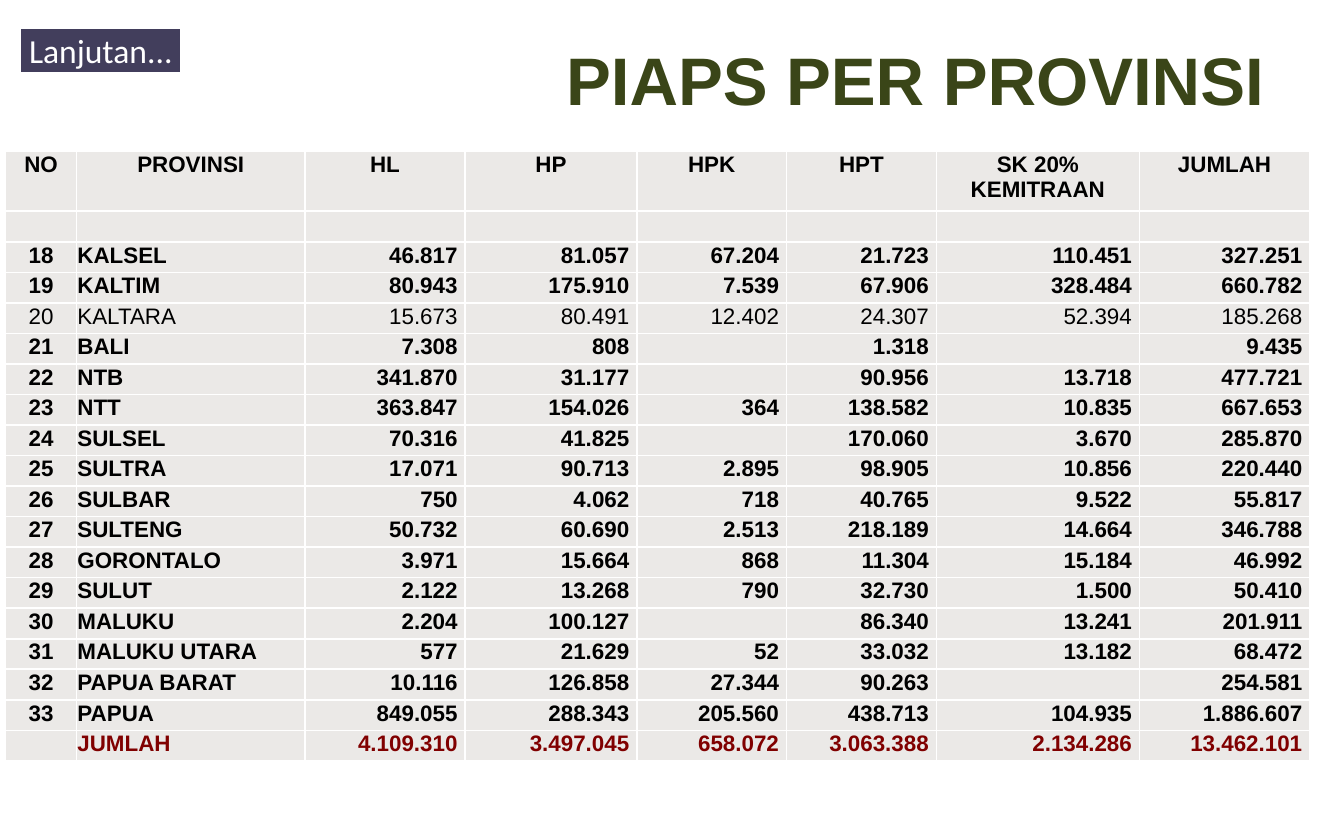
from lxml.etree import SubElement
from pptx import Presentation
from pptx.dml.color import RGBColor
from pptx.enum.shapes import MSO_SHAPE
from pptx.enum.text import MSO_ANCHOR, MSO_AUTO_SIZE, PP_ALIGN as ALIGN
from pptx.oxml import parse_xml
from pptx.oxml.ns import nsdecls, qn
from pptx.util import Pt

COLORS = {
    "title": "3A4518", "title_edge": "FCFCFC", "badge": "423E5C",
    "white": "FFFFFF", "cell": "EBE9E7", "text": "000000", "total": "800000",
}


def write(frame, text, size=12, font="Arial", color="text", bold=False, align=ALIGN.LEFT):
    """Put one formatted run in the frame and return it; empty text only sets the line height."""
    paragraph = frame.paragraphs[0]
    paragraph.alignment = align
    if not text:
        paragraph._p.get_or_add_endParaRPr().set("sz", str(size * 100))
        return None
    run = paragraph.add_run()
    run.text = text
    run.font.size = Pt(size)
    run.font.name = font
    run.font.bold = bold
    run.font.color.rgb = RGBColor.from_string(COLORS[color])
    return run


def add_borders(cell):
    properties = cell._tc.get_or_add_tcPr()
    for position, side in enumerate(("lnL", "lnR", "lnT", "lnB")):
        line = properties.makeelement(qn(f"a:{side}"), {"w": str(Pt(1))})
        fill = SubElement(line, qn("a:solidFill"))
        SubElement(fill, qn("a:srgbClr"), val=COLORS["white"])
        properties.insert(position, line)


deck = Presentation()
deck.slide_width, deck.slide_height = Pt(720), Pt(450)
slide = deck.slides.add_slide(deck.slide_layouts[6])

# Title
title = slide.shapes.add_textbox(Pt(36.5), Pt(21), Pt(648), Pt(33)).text_frame
title.word_wrap = True
title.vertical_anchor = MSO_ANCHOR.MIDDLE
title_run = write(title, "PIAPS PER PROVINSI", size=36, color="title", bold=True,
                  align=ALIGN.RIGHT)
title.paragraphs[0].line_spacing = Pt(52)
title_run.font._element.insert(0, parse_xml(
    f'<a:ln {nsdecls("a")} w="{Pt(1.4)}"><a:solidFill>'
    f'<a:srgbClr val="{COLORS["title_edge"]}"/></a:solidFill></a:ln>'))

# Continuation badge
badge = slide.shapes.add_shape(MSO_SHAPE.RECTANGLE, Pt(8.5), Pt(12.5), Pt(91), Pt(29))
badge.shadow.inherit = False
badge.fill.solid()
badge.fill.fore_color.rgb = RGBColor.from_string(COLORS["badge"])
badge.line.color.rgb = RGBColor.from_string(COLORS["white"])
badge.line.width = Pt(6)
badge.text_frame.word_wrap = False
badge.text_frame.auto_size = MSO_AUTO_SIZE.NONE
badge.text_frame.vertical_anchor = MSO_ANCHOR.TOP
badge.text_frame.margin_right = Pt(0)
write(badge.text_frame, "Lanjutan...", size=18, font="Calibri", color="white")

# Province table
HEADER = ["NO", "PROVINSI", "HL", "HP", "HPK", "HPT", "SK 20% KEMITRAAN", "JUMLAH"]
TOTAL = ["", "JUMLAH", "4.109.310", "3.497.045", "658.072", "3.063.388", "2.134.286",
         "13.462.101"]
PROVINCES = [
    ["KALSEL", "46.817", "81.057", "67.204", "21.723", "110.451", "327.251"],
    ["KALTIM", "80.943", "175.910", "7.539", "67.906", "328.484", "660.782"],
    ["KALTARA", "15.673", "80.491", "12.402", "24.307", "52.394", "185.268"],
    ["BALI", "7.308", "808", "", "1.318", "", "9.435"],
    ["NTB", "341.870", "31.177", "", "90.956", "13.718", "477.721"],
    ["NTT", "363.847", "154.026", "364", "138.582", "10.835", "667.653"],
    ["SULSEL", "70.316", "41.825", "", "170.060", "3.670", "285.870"],
    ["SULTRA", "17.071", "90.713", "2.895", "98.905", "10.856", "220.440"],
    ["SULBAR", "750", "4.062", "718", "40.765", "9.522", "55.817"],
    ["SULTENG", "50.732", "60.690", "2.513", "218.189", "14.664", "346.788"],
    ["GORONTALO", "3.971", "15.664", "868", "11.304", "15.184", "46.992"],
    ["SULUT", "2.122", "13.268", "790", "32.730", "1.500", "50.410"],
    ["MALUKU", "2.204", "100.127", "", "86.340", "13.241", "201.911"],
    ["MALUKU UTARA", "577", "21.629", "52", "33.032", "13.182", "68.472"],
    ["PAPUA BARAT", "10.116", "126.858", "27.344", "90.263", "", "254.581"],
    ["PAPUA", "849.055", "288.343", "205.560", "438.713", "104.935", "1.886.607"],
]
FIRST_NUMBER = 18
numbered = [[str(number), *values] for number, values in enumerate(PROVINCES, FIRST_NUMBER)]
rows = [HEADER, [""] * len(HEADER), *numbered, TOTAL]
widths = [38, 122.4, 85.8, 92, 80.2, 80.3, 108.8, 91.3]
header_height, row_height = 32, 16.36

table = slide.shapes.add_table(
    len(rows), len(widths), Pt(3), Pt(81.2), Pt(sum(widths)),
    Pt(header_height + row_height * (len(rows) - 1))).table
table.horz_banding = False
for column, width in zip(table.columns, widths):
    column.width = Pt(width)

for r, values in enumerate(rows):
    table.rows[r].height = Pt(row_height if r else header_height)
    for c, value in enumerate(values):
        cell = table.cell(r, c)
        is_figure = r > 0 and c > 1
        cell.margin_left = cell.margin_top = Pt(0.5)
        cell.margin_right = Pt(4 if is_figure else 0.5)
        cell.margin_bottom = Pt(0)
        cell.fill.solid()
        cell.fill.fore_color.rgb = RGBColor.from_string(COLORS["cell"])
        add_borders(cell)
        if r == 0 or c == 0:
            align = ALIGN.CENTER
        else:
            align = ALIGN.RIGHT if is_figure else ALIGN.LEFT
        write(cell.text_frame, value, color="total" if values is TOTAL else "text",
              bold="KALTARA" not in values, align=align)

deck.save("out.pptx")
